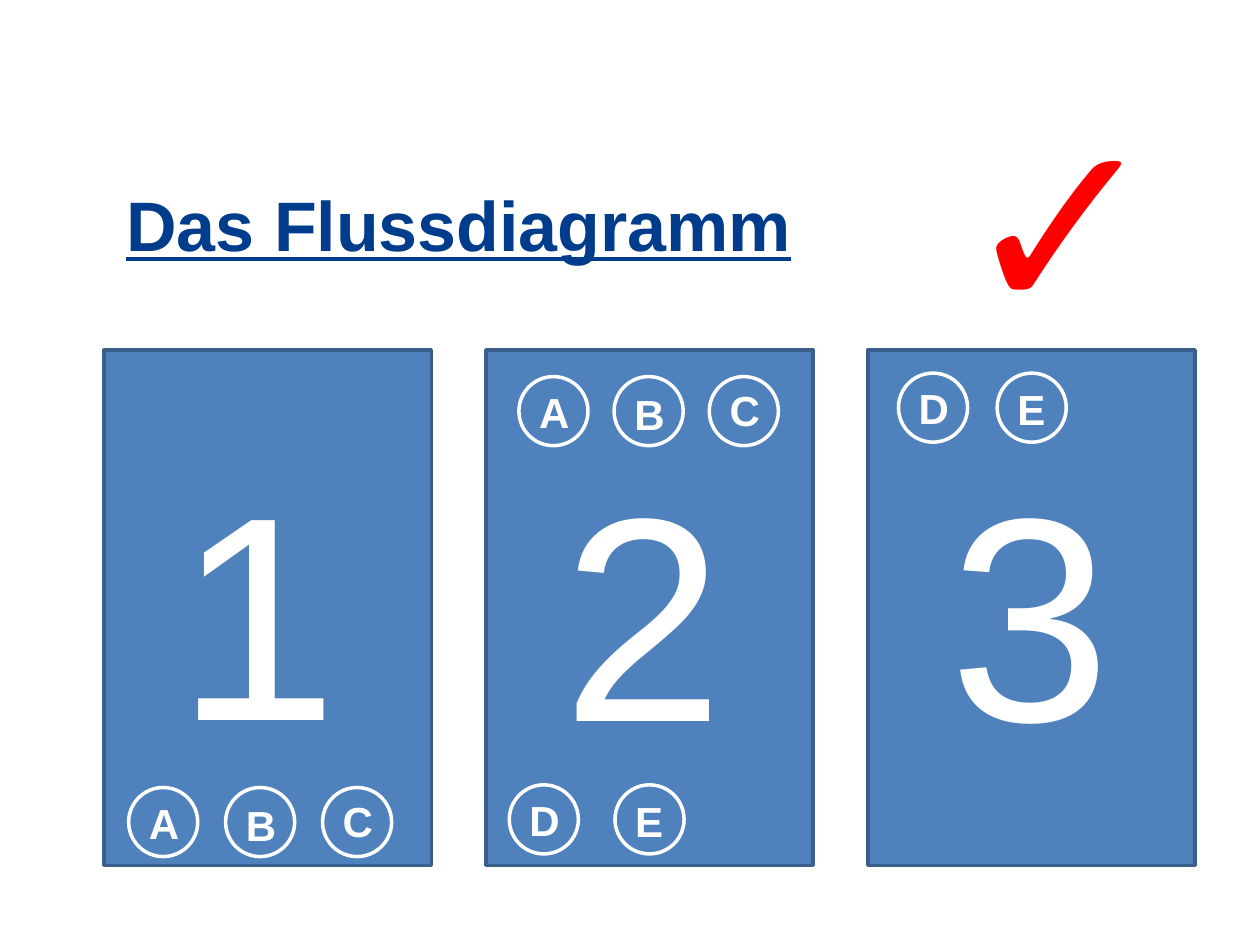
from pptx import Presentation
from pptx.dml.color import RGBColor
from pptx.enum import shapes as sh, text as tx
from pptx.util import Pt

NAVY = RGBColor(0x00, 0x3C, 0x8C)
BLUE = RGBColor(0x4F, 0x81, 0xBD)
EDGE = RGBColor(0x3A, 0x5F, 0x8C)
WHITE = RGBColor(0xFF, 0xFF, 0xFF)
RED = RGBColor(0xFF, 0x00, 0x00)


def write(frame, words, size, color, bold=False, under=False):
    """Fill a text frame with one left-aligned, formatted paragraph."""
    frame.word_wrap = True
    frame.auto_size = tx.MSO_AUTO_SIZE.NONE
    frame.vertical_anchor = tx.MSO_ANCHOR.TOP
    para = frame.paragraphs[0]
    para.alignment = tx.PP_ALIGN.LEFT
    run = para.add_run()
    run.text = words
    font = run.font
    font.name, font.size, font.color.rgb = "Arial", Pt(size), color
    font.bold, font.underline = bold, under


class Board:
    """Holds the current slide and its style; all lengths in points."""
    card = (187, 294.5)
    ring = 39.5
    drop = {"A": 2, "B": 3.5, "C": 1, "D": 2, "E": 2.5}  # label offsets

    def __init__(self, deck):
        self.slide = deck.slides.add_slide(deck.slide_layouts[5])

    def title(self, words, x, y, w, h):
        box = self.slide.shapes.title
        box.left, box.top, box.width, box.height = map(Pt, (x, y, w, h))
        write(box.text_frame, words, size=40, color=NAVY, bold=True, under=True)

    def shape(self, kind, x, y, w, h, edge):
        item = self.slide.shapes.add_shape(kind, *map(Pt, (x, y, w, h)))
        item.shadow.inherit = False
        item.fill.solid()
        item.fill.fore_color.rgb = BLUE
        item.line.color.rgb = edge
        item.line.width = Pt(2)

    def label(self, words, x, y, w, h, **style):
        box = self.slide.shapes.add_textbox(*map(Pt, (x, y, w, h)))
        write(box.text_frame, words, **style)

    def panel(self, x, y):
        self.shape(sh.MSO_SHAPE.RECTANGLE, x, y, *self.card, EDGE)

    def rings(self, marks, x, y, step):
        for i, mark in enumerate(marks):
            left = x + i * step
            self.shape(sh.MSO_SHAPE.FLOWCHART_CONNECTOR, left, y,
                       self.ring, self.ring, WHITE)
            self.label(mark, left + 4.5, y + self.drop[mark], 31, 36,
                       size=24, color=WHITE, bold=True)


def main():
    deck = Presentation()
    deck.slide_width, deck.slide_height = Pt(720), Pt(540)
    board = Board(deck)

    # Heading
    board.title("Das Flussdiagramm", 65, 100, 590, 55.5)

    # Numbered panels
    for i, digit in enumerate("123"):
        board.panel(59.5 + 218.2 * i, 200)
        board.label(digit, 93.6 + 221 * i, 243 if i else 242, 119, 208,
                    size=166, color=WHITE)

    # Connectors that link one panel to the next
    board.rings("ABC", 73.5, 450, 55.4)
    board.rings("ABC", 296.5, 215.2, 54.4)
    board.rings("DE", 291, 448.5, 60.4)
    board.rings("DE", 513.4, 213.2, 56.4)

    # Check mark
    board.label("✓", 541.5, 37.5, 142, 174, size=138, color=RED)

    deck.save("out.pptx")


if __name__ == "__main__":
    main()
